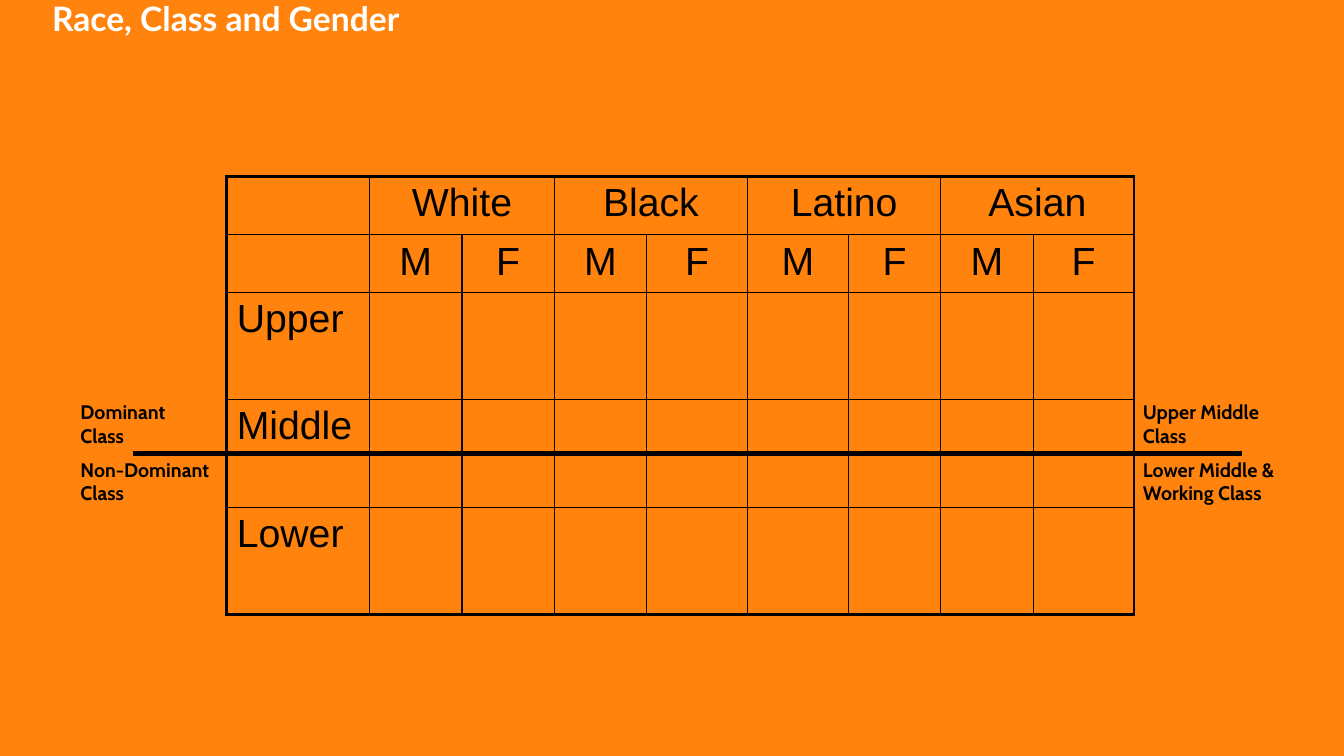
"""Build the Race, Class and Gender slide with its table and class divide."""
import pptx
import pptx.dml.color
import pptx.enum.shapes
import pptx.enum.text
import pptx.oxml.ns
import pptx.util
from lxml import etree

Pt = pptx.util.Pt
Align = pptx.enum.text.PP_ALIGN
Anchor = pptx.enum.text.MSO_ANCHOR
qn = pptx.oxml.ns.qn
COLORS = {"background": "FF830C", "title": "FFFFFF", "ink": "000000"}


def style(paragraph, font_name, size, color, bold=False):
    paragraph.font.name = font_name
    paragraph.font.size = Pt(size)
    paragraph.font.bold = bold
    paragraph.font.color.rgb = pptx.dml.color.RGBColor.from_string(COLORS[color])


def set_borders(cell, widths):
    properties = cell._tc.get_or_add_tcPr()
    for index, (side, width) in enumerate(widths.items()):
        border = etree.Element(qn("a:" + side), w=str(Pt(width)))
        fill = etree.SubElement(border, qn("a:solidFill"))
        etree.SubElement(fill, qn("a:srgbClr"), val=COLORS["ink"])
        properties.insert(index, border)


presentation = pptx.Presentation()
presentation.slide_width = Pt(960)
presentation.slide_height = Pt(540)
slide = presentation.slides.add_slide(presentation.slide_layouts[5])
slide.background.fill.solid()
slide.background.fill.fore_color.rgb = pptx.dml.color.RGBColor.from_string(COLORS["background"])

title = slide.shapes.title
title.left, title.top, title.width, title.height = Pt(30), Pt(0), Pt(851), Pt(29)
title.text_frame.text = "Race, Class and Gender"
title.text_frame.auto_size = pptx.enum.text.MSO_AUTO_SIZE.NONE
title.text_frame.vertical_anchor = Anchor.MIDDLE
heading = title.text_frame.paragraphs[0]
heading.alignment = Align.LEFT
heading.line_spacing = 0.9
style(heading, "Lato", 24, "title", bold=True)

races = ["White", "Black", "Latino", "Asian"]
classes = ["Upper", "Middle", "Lower"]
column_widths = [102, 66, 66, 66, 72, 72, 66, 66, 72]
row_heights = [41.8, 41, 76.5, 77, 76.5]
last_row, last_column = len(row_heights) - 1, len(column_widths) - 1

grid = slide.shapes.add_table(
    len(row_heights), len(column_widths), Pt(162), Pt(126), Pt(sum(column_widths)), Pt(sum(row_heights))
).table
grid.first_row = False
grid.horz_banding = False
for column, width in zip(grid.columns, column_widths):
    column.width = Pt(width)
for row, height in zip(grid.rows, row_heights):
    row.height = Pt(height)

labels = {(row, 0): name for row, name in enumerate(classes, start=2)}
for index, race in enumerate(races):
    first = 1 + 2 * index
    grid.cell(0, first).merge(grid.cell(0, first + 1))
    labels.update({(0, first): race, (1, first): "M", (1, first + 1): "F"})

for row in range(last_row + 1):
    for column in range(last_column + 1):
        cell = grid.cell(row, column)
        cell.fill.background()
        set_borders(cell, {
            "lnL": 2.25 if column == 0 else 1,
            "lnR": 2.25 if column == last_column else 1,
            "lnT": 2.25 if row == 0 else 1,
            "lnB": 2.25 if row == last_row else 1,
        })
        if (row, column) in labels:
            cell.text = labels[row, column]
            label = cell.text_frame.paragraphs[0]
            label.alignment = Align.CENTER if column else Align.LEFT
            style(label, "Arial", 28, "ink")

divide = slide.shapes.add_connector(
    pptx.enum.shapes.MSO_CONNECTOR.STRAIGHT, Pt(95), Pt(324), Pt(887), Pt(324)
)
divide.line.width = Pt(3)
divide.line.color.rgb = pptx.dml.color.RGBColor.from_string(COLORS["ink"])
etree.SubElement(divide._element.spPr, qn("a:effectLst"))

class_notes = [
    ("Dominant\vClass", 50.4, 282.2, 79),
    ("Non-Dominant\vClass", 50.4, 323.5, 112),
    ("Upper Middle\nClass", 809.3, 282.2, 104),
    ("Lower Middle &\vWorking Class", 809.3, 323.5, 119),
]
for wording, left, top, width in class_notes:
    note = slide.shapes.add_textbox(Pt(left), Pt(top), Pt(width), Pt(41)).text_frame
    note.word_wrap = False
    note.auto_size = pptx.enum.text.MSO_AUTO_SIZE.SHAPE_TO_FIT_TEXT
    note.text = wording
    for line in note.paragraphs:
        style(line, "Cabin", 14, "ink", bold=True)

presentation.save("out.pptx")
